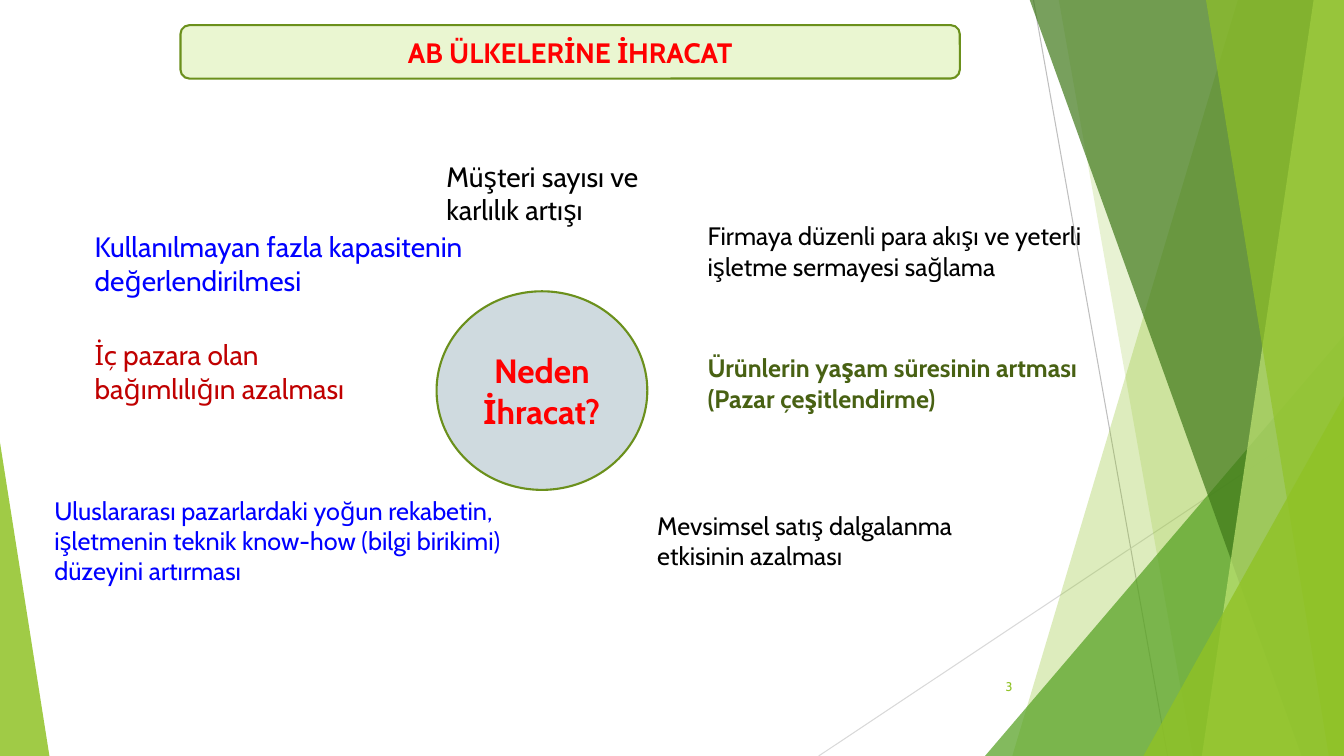
from lxml import etree
from pptx import Presentation
from pptx.dml.color import RGBColor
from pptx.enum.shapes import MSO_CONNECTOR, MSO_SHAPE
from pptx.enum.text import MSO_ANCHOR, MSO_AUTO_SIZE, PP_ALIGN
from pptx.oxml.ns import qn
from pptx.util import Inches, Pt

WIDTH, HEIGHT, TOP = 13.33, 7.5, -0.01
GREEN, RED, BLUE, BLACK = "90C226", "FF0000", "0000FF", "000000"


def paint(color_format, color, opacity=100):
    color_format.rgb = RGBColor.from_string(color)
    if opacity < 100:
        solid = color_format._xFill if hasattr(color_format, "_xFill") else None
        if solid is None:
            solid = color_format._color._xClr.getparent()
        alpha = etree.SubElement(solid.find(qn("a:srgbClr")), qn("a:alpha"))
        alpha.set("val", str(opacity * 1000))


def write(shape, lines, size, color, bold=False, align=PP_ALIGN.LEFT):
    shape.text_frame.text = lines
    for paragraph in shape.text_frame.paragraphs:
        paragraph.alignment = align
        for run in paragraph.runs:
            run.font.name = "Cabin"
            run.font.size = Pt(size)
            run.font.bold = bold
            paint(run.font.color, color)


presentation = Presentation()
presentation.slide_width = Inches(WIDTH)
presentation.slide_height = Inches(HEIGHT)
slide = presentation.slides.add_slide(presentation.slide_layouts[6])
shapes = slide.shapes

# Thin background lines
for x1, y1, x2, y2, color in [
    (10.25, 0, 11.58, HEIGHT, "BFBFBF"),
    (WIDTH, 4.03, 8.12, HEIGHT, "D9D9D9"),
]:
    ray = shapes.add_connector(
        MSO_CONNECTOR.STRAIGHT, Inches(x1), Inches(y1), Inches(x2), Inches(y2))
    paint(ray.line.color, color)
    ray.line.width = Pt(0.75)
    etree.SubElement(ray._element.spPr, qn("a:effectLst"))

# Translucent facets, back to front: bands run from top x to bottom x along
# the right edge; triangles have left, top, width and apex position
facets = [
    ("band", (12.28, 10.04), GREEN, 30),
    ("band", (10.5, 11.83), GREEN, 20),
    ("triangle", (9.77, 3.33, 3.56, 1), "54A021", 72),
    ("band", (10.21, 12.91), "3F7819", 70),
    ("band", (13.03, 11.92), "C0E474", 70),
    ("band", (11.96, 13.18), GREEN, 65),
    ("triangle", (11.34, 3.93, 1.99, 1), GREEN, 80),
    ("triangle", (0, 4.39, 0.49, 0), GREEN, 85),
]
for kind, geometry, color, opacity in facets:
    if kind == "band":
        top_x, bottom_x = geometry
        outline = shapes.build_freeform(Inches(top_x), Inches(TOP))
        outline.add_line_segments([
            (Inches(x), Inches(y))
            for x, y in [(WIDTH, TOP), (WIDTH, HEIGHT), (bottom_x, HEIGHT)]
        ])
        facet = outline.convert_to_shape()
    else:
        left, top, width, apex = geometry
        facet = shapes.add_shape(
            MSO_SHAPE.ISOSCELES_TRIANGLE, Inches(left), Inches(top),
            Inches(width), Inches(HEIGHT - top))
        facet.adjustments[0] = apex
    facet.shadow.inherit = False
    facet.fill.solid()
    paint(facet.fill.fore_color, color, opacity)
    facet.line.fill.background()

# Slide number
page_number = shapes.add_textbox(Inches(9.39), Inches(6.61), Inches(0.75), Inches(0.4))
page_number.text_frame.vertical_anchor = MSO_ANCHOR.MIDDLE
write(page_number, "3", 9, GREEN, align=PP_ALIGN.RIGHT)

# Title bar and central question
for preset, box, fill, words, size in [
    (MSO_SHAPE.ROUNDED_RECTANGLE, (1.79, 0.25, 7.73, 0.53), "EAF6D1",
     "AB ÜLKELERİNE İHRACAT", 20),
    (MSO_SHAPE.OVAL, (4.33, 2.89, 2.09, 1.97), "CFDADF", "Neden\nİhracat?", 24),
]:
    heading = shapes.add_shape(preset, *map(Inches, box))
    heading.shadow.inherit = False
    heading.fill.solid()
    paint(heading.fill.fore_color, fill)
    paint(heading.line.color, "6B901C")
    heading.line.width = Pt(1.5)
    heading.text_frame.vertical_anchor = MSO_ANCHOR.MIDDLE
    write(heading, words, size, RED, True, PP_ALIGN.CENTER)

# Reasons around the question
reasons = [
    ((4.33, 1.53, 2.34, 0.77), "Müşteri sayısı ve\nkarlılık artışı", 20, BLACK, False),
    ((0.84, 2.23, 3.88, 0.77),
     "Kullanılmayan fazla kapasitenin değerlendirilmesi", 20, BLUE, False),
    ((0.84, 3.3, 2.83, 0.77),
     "İç pazara olan\nbağımlılığın azalması", 20, "C00000", False),
    ((0.44, 4.86, 4.69, 1.01),
     "Uluslararası pazarlardaki yoğun rekabetin, işletmenin teknik know-how "
     "(bilgi birikimi) düzeyini artırması", 18, BLUE, False),
    ((6.42, 5.01, 3.3, 0.71),
     "Mevsimsel satış dalgalanma etkisinin azalması", 18, BLACK, False),
    ((6.92, 3.45, 4.49, 0.71),
     "Ürünlerin yaşam süresinin artması (Pazar çeşitlendirme)", 18, "486113", True),
    ((6.92, 2.14, 4.19, 0.71),
     "Firmaya düzenli para akışı ve yeterli işletme sermayesi sağlama",
     18, BLACK, False),
]
for box, words, size, color, bold in reasons:
    reason = shapes.add_textbox(*map(Inches, box))
    reason.text_frame.word_wrap = "\n" not in words
    reason.text_frame.auto_size = MSO_AUTO_SIZE.SHAPE_TO_FIT_TEXT
    write(reason, words, size, color, bold)

presentation.save("out.pptx")
